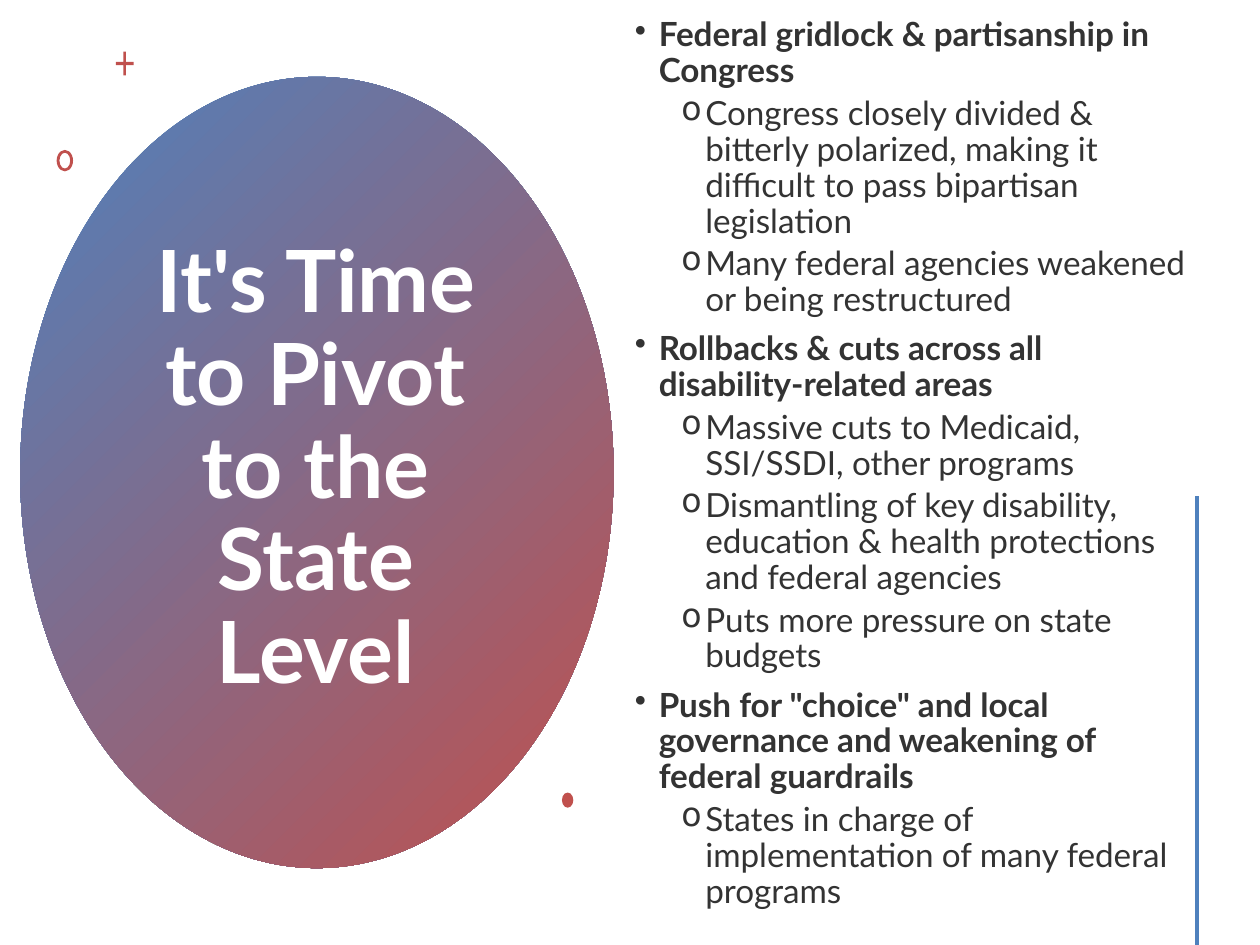
import pptx
import pptx.util
import pptx.dml.color
import pptx.enum.shapes
import pptx.enum.text
import pptx.oxml.ns
import lxml.etree

Pt = pptx.util.Pt
Kind = pptx.enum.shapes.MSO_SHAPE
Align = pptx.enum.text.PP_ALIGN
Anchor = pptx.enum.text.MSO_ANCHOR
WIDE, HIGH = pptx.util.Inches(10), pptx.util.Inches(7.5)
BLUE, RED, WHITE, DARK = "4F81BD", "C0504D", "FFFFFF", "333333"

TITLE = {"name": "Lato", "size": Pt(49), "bold": True}
HEAD = {"name": "Lato", "size": Pt(19), "bold": True}
ITEM = {**HEAD, "bold": False}
LEVELS = [
    {"font": HEAD, "mark": "•", "left": 0.19, "para": {"level": 0, "space_before": Pt(7.5)}},
    {"font": ITEM, "mark": "o", "left": 0.56, "para": {"level": 1, "space_before": Pt(3.8)}},
]
POINTS = [
    ("Federal gridlock & partisanship in Congress", [
        "Congress closely divided & bitterly polarized, making it difficult to pass bipartisan legislation",
        "Many federal agencies weakened or being restructured",
    ]),
    ("Rollbacks & cuts across all disability-related areas", [
        "Massive cuts to Medicaid, SSI/SSDI, other programs",
        "Dismantling of key disability, education & health protections and federal agencies",
        "Puts more pressure on state budgets",
    ]),
    ('Push for "choice" and local governance and weakening of federal guardrails', [
        "States in charge of implementation of many federal programs",
    ]),
]


def across(share):
    return round(WIDE * share / 100)


def down(share):
    return round(HIGH * share / 100)


def place(x, y, w, h):
    return across(x), down(y), across(w), down(h)


def tint(text):
    return pptx.dml.color.RGBColor.from_string(text)


def apply(thing, values):
    for name, value in values.items():
        setattr(thing, name, value)


def paint(shape, color):
    shape.shadow.inherit = False
    shape.line.fill.background()
    shape.fill.solid()
    shape.fill.fore_color.rgb = tint(color)


def add_shape(slide, kind, box, color):
    shape = slide.shapes.add_shape(kind, *place(*box))
    paint(shape, color)
    return shape


def add_oval(slide, box, colors):
    oval = add_shape(slide, Kind.OVAL, box, colors[0])
    oval.fill.gradient()
    oval.fill.gradient_angle = 315
    for stop, color in zip(oval.fill.gradient_stops, colors):
        stop.color.rgb = tint(color)


def add_plus(slide, x, y, reach, rise, thin, thick):
    spots = [(-thin, -rise), (thin, -rise), (thin, -thick), (reach, -thick)]
    spots += [(reach, thick), (thin, thick), (thin, rise), (-thin, rise)]
    spots += [(-thin, thick), (-reach, thick), (-reach, -thick), (-thin, -thick)]
    dots = [(across(x + dx), down(y + dy)) for dx, dy in spots]
    pen = slide.shapes.build_freeform(*dots[0])
    pen.add_line_segments(dots[1:])
    paint(pen.convert_to_shape(), RED)


def add_frame(slide, box, values):
    frame = slide.shapes.add_textbox(*place(*box)).text_frame
    apply(frame, {"word_wrap": True, "margin_top": 0, "margin_bottom": 0, **values})
    return frame


def write(para, text, font, color):
    para.line_spacing = 0.9
    run = para.add_run()
    run.text = text
    apply(run.font, font)
    run.font.color.rgb = tint(color)


def add_mark(para, mark, left):
    props = para._p.get_or_add_pPr()
    props.set("marL", str(pptx.util.Inches(left)))
    props.set("indent", str(pptx.util.Inches(-0.19)))
    char = lxml.etree.SubElement(props, pptx.oxml.ns.qn("a:buChar"))
    char.set("char", mark)


def add_list(slide, box):
    frame = add_frame(slide, box, {"vertical_anchor": Anchor.TOP})
    rows = [(rank, text) for head, items in POINTS
            for rank, text in [(0, head)] + [(1, item) for item in items]]
    for at, (rank, text) in enumerate(rows):
        look = LEVELS[rank]
        para = frame.add_paragraph() if at else frame.paragraphs[0]
        write(para, text, look["font"], DARK)
        apply(para, look["para"])
        add_mark(para, look["mark"], look["left"])
    frame.paragraphs[0].space_before = Pt(0)


def add_title(slide, box, text):
    para = add_frame(slide, box, {"vertical_anchor": Anchor.MIDDLE}).paragraphs[0]
    para.alignment = Align.CENTER
    write(para, text, TITLE, WHITE)


def add_rule(slide, x, top, end):
    rule = slide.shapes.add_connector(
        pptx.enum.shapes.MSO_CONNECTOR.STRAIGHT, across(x), down(top), across(x), down(end))
    rule.line.color.rgb = tint(BLUE)
    rule.line.width = Pt(2)
    lxml.etree.SubElement(rule._element.spPr, pptx.oxml.ns.qn("a:effectLst"))


def main():
    deck = pptx.Presentation()
    apply(deck, {"slide_width": WIDE, "slide_height": HIGH})
    slide = deck.slides.add_slide(deck.slide_layouts[6])
    add_oval(slide, (1.6, 8.13, 47.1, 83.73), (BLUE, RED))
    add_title(slide, (10.1, 18.53, 29.9, 62.53), "It's Time to Pivot to the State Level")
    add_plus(slide, 9.9, 6.73, 0.7, 1.25, 0.1, 0.17)
    ring = add_shape(slide, Kind.DONUT, (4.5, 15.87, 1.3, 2.27), RED)
    ring.adjustments[0] = 0.17
    add_list(slide, (49.4, 1.93, 46.4, 94))
    add_shape(slide, Kind.OVAL, (44.6, 83.87, 0.9, 1.6), RED)
    add_rule(slide, 95, 52.5, 100)
    deck.save("out.pptx")


if __name__ == "__main__":
    main()
